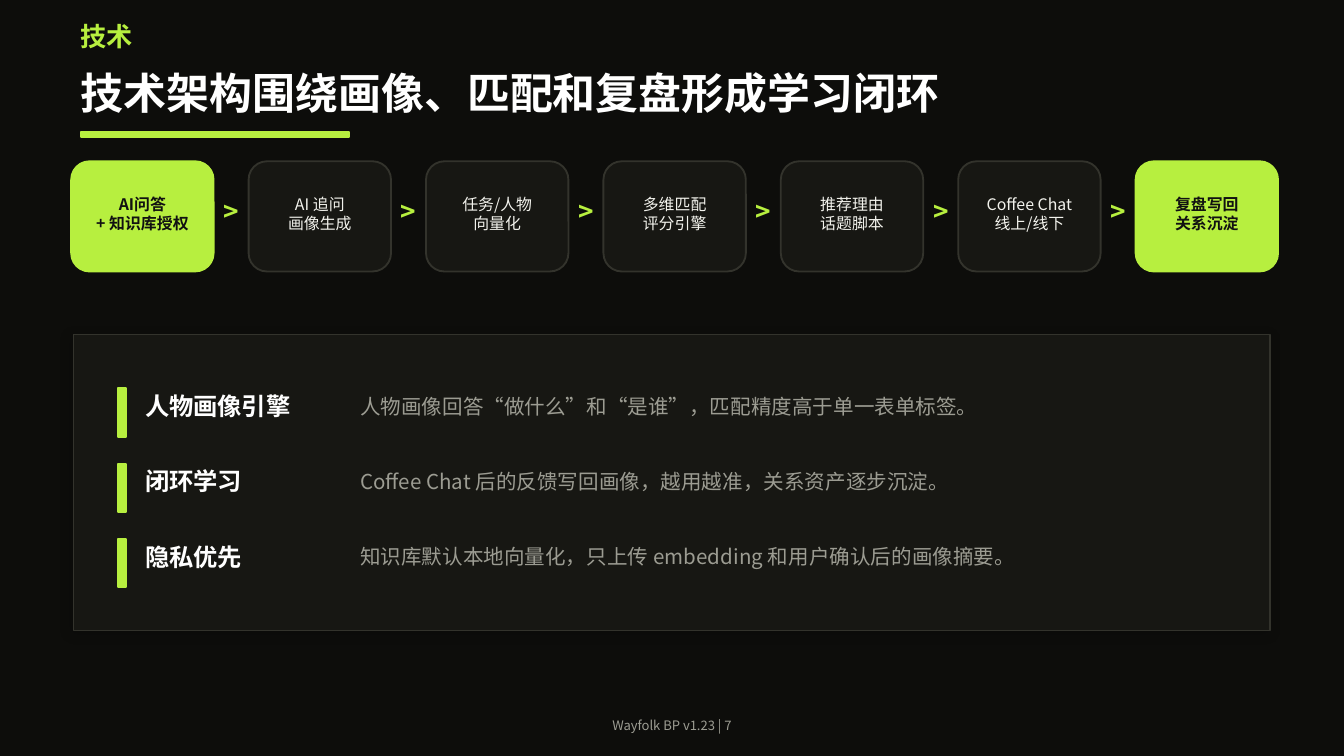
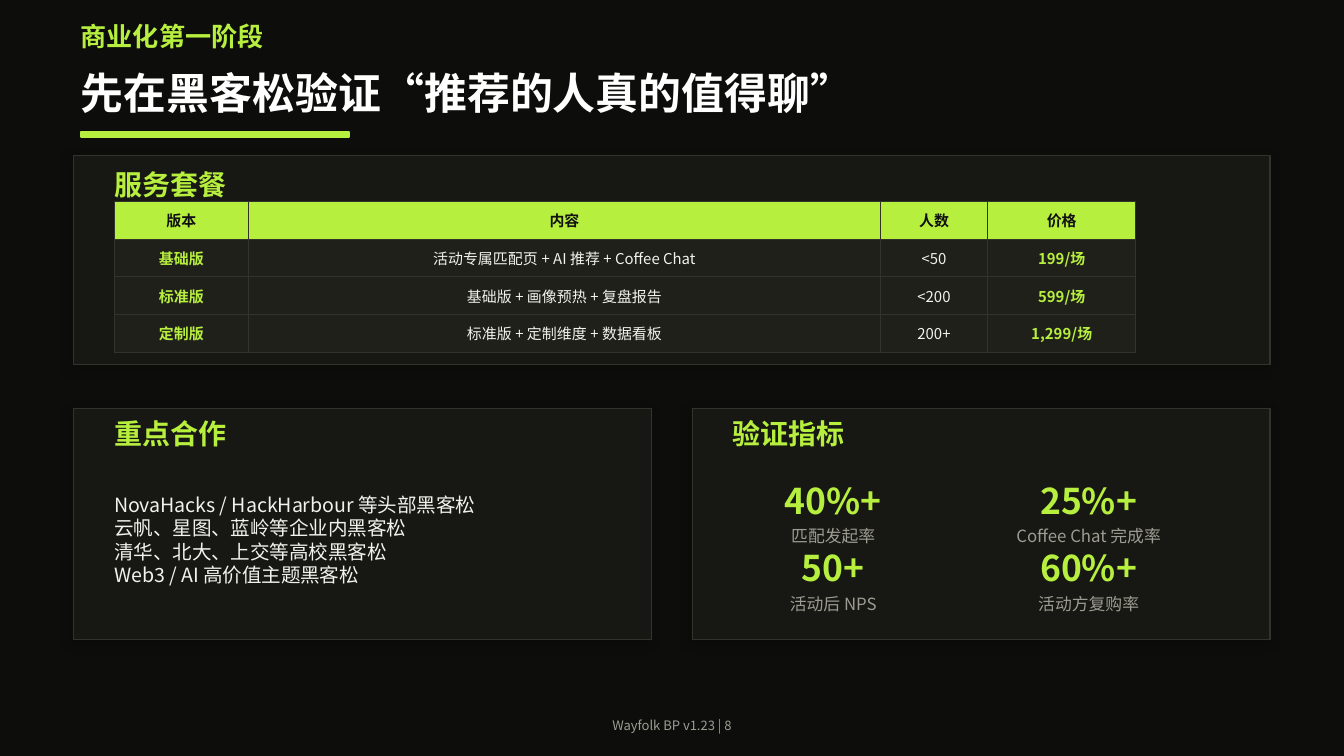
"""Build two dark slides on system architecture and first-stage commercialisation."""
from dataclasses import dataclass

from lxml import etree
from pptx import Presentation, util as u
from pptx.dml.color import RGBColor
from pptx.enum import shapes, text
from pptx.oxml.ns import qn
from pptx.shapes.autoshape import Shape
from pptx.slide import Slide
from pptx.text.text import TextFrame

FONT = "Noto Sans CJK SC"
COLORS = {
    "background": "0D0D0B",
    "accent": "B7EF3F",
    "panel": "171713",
    "cell": "20201A",
    "border": "33332C",
    "ink": "111111",
    "body": "F2F2EC",
    "muted": "9C9C92",
    "white": "FFFFFF",
}
LEFT, CENTER = text.PP_ALIGN.LEFT, text.PP_ALIGN.CENTER
RECTANGLE = shapes.MSO_SHAPE.RECTANGLE
ROUNDED = shapes.MSO_SHAPE.ROUNDED_RECTANGLE


@dataclass(frozen=True)
class Box:
    """A rectangle in inches."""
    left: float
    top: float
    width: float
    height: float

    def lengths(self) -> tuple[u.Length, ...]:
        """Return the sides as slide lengths."""
        return tuple(u.Inches(side) for side in (self.left, self.top, self.width, self.height))


@dataclass(frozen=True)
class Step:
    """One stage of the process row."""
    label: str
    highlighted: bool = False


@dataclass(frozen=True)
class Feature:
    """A named strength with its explanation."""
    name: str
    detail: str


@dataclass(frozen=True)
class Metric:
    """A target value with its caption."""
    value: str
    caption: str


@dataclass(frozen=True)
class Panel:
    """A bordered area with an optional heading."""
    box: Box
    heading: str = ""
    heading_gap: float = 0.06
    heading_width: float = 3


STEPS = (
    Step("AI问答\n+ 知识库授权", True),
    Step("AI 追问\n画像生成"),
    Step("任务/人物\n向量化"),
    Step("多维匹配\n评分引擎"),
    Step("推荐理由\n话题脚本"),
    Step("Coffee Chat\n线上/线下"),
    Step("复盘写回\n关系沉淀", True),
)
FEATURES = (
    Feature("人物画像引擎", "人物画像回答“做什么”和“是谁”，匹配精度高于单一表单标签。"),
    Feature("闭环学习", "Coffee Chat 后的反馈写回画像，越用越准，关系资产逐步沉淀。"),
    Feature("隐私优先", "知识库默认本地向量化，只上传 embedding 和用户确认后的画像摘要。"),
)
PACKAGES = (
    ("版本", "内容", "人数", "价格"),
    ("基础版", "活动专属匹配页 + AI 推荐 + Coffee Chat", "<50", "199/场"),
    ("标准版", "基础版 + 画像预热 + 复盘报告", "<200", "599/场"),
    ("定制版", "标准版 + 定制维度 + 数据看板", "200+", "1,299/场"),
)
COLUMN_WIDTHS = (1, 4.7, 0.8, 1.1)
ROW_HEIGHT = 0.28
PARTNERS = "\n".join((
    "NovaHacks / HackHarbour 等头部黑客松",
    "云帆、星图、蓝岭等企业内黑客松",
    "清华、北大、上交等高校黑客松",
    "Web3 / AI 高价值主题黑客松",
))
METRICS = (
    Metric("40%+", "匹配发起率"),
    Metric("25%+", "Coffee Chat 完成率"),
    Metric("50+", "活动后 NPS"),
    Metric("60%+", "活动方复购率"),
)


def rgb(name: str) -> RGBColor:
    """Look up a named colour."""
    return RGBColor.from_string(COLORS[name])


def write(frame: TextFrame, content: str, *, size: float, color: str,
          bold: bool = False, align: text.PP_ALIGN = LEFT) -> None:
    """Write one formatted paragraph for each line of content."""
    for index, line in enumerate(content.split("\n")):
        paragraph = frame.add_paragraph() if index else frame.paragraphs[0]
        paragraph.alignment = align
        run = paragraph.add_run()
        run.text = line
        run.font.name = FONT
        run.font.size = u.Pt(size)
        run.font.bold = bold
        run.font.color.rgb = rgb(color)
        etree.SubElement(run.font._element, qn("a:ea"), typeface=FONT)


def add_text(slide: Slide, box: Box, content: str, **style) -> None:
    """Place vertically centred text without margins."""
    frame = slide.shapes.add_textbox(*box.lengths()).text_frame
    frame.word_wrap = True
    frame.vertical_anchor = text.MSO_ANCHOR.MIDDLE
    frame.margin_left = frame.margin_top = frame.margin_right = frame.margin_bottom = 0
    write(frame, content, **style)


def add_block(slide: Slide, box: Box, fill: str = "accent", line: str = "accent",
              line_width: float = 1, kind: shapes.MSO_SHAPE = RECTANGLE) -> Shape:
    """Draw a filled and outlined shape without a shadow."""
    shape = slide.shapes.add_shape(kind, *box.lengths())
    shape.shadow.inherit = False
    shape.fill.solid()
    shape.fill.fore_color.rgb = rgb(fill)
    shape.line.color.rgb = rgb(line)
    shape.line.width = u.Pt(line_width)
    return shape


def add_panel(slide: Slide, panel: Panel) -> None:
    """Draw a panel with a soft shadow and its heading."""
    shape = add_block(slide, panel.box, "panel", "border", 0.6)
    effects = shape._element.spPr.find(qn("a:effectLst"))
    shadow = etree.SubElement(effects, qn("a:outerShdw"), blurRad=str(u.Pt(6)),
                              dist=str(u.Pt(2)), dir=str(135 * 60000), rotWithShape="0")
    shade = etree.SubElement(shadow, qn("a:srgbClr"), val="000000")
    etree.SubElement(shade, qn("a:alpha"), val="20000")
    if panel.heading:
        heading_box = Box(panel.box.left + 0.3, panel.box.top + panel.heading_gap,
                          panel.heading_width, 0.25)
        add_text(slide, heading_box, panel.heading, size=15, color="accent", bold=True)


def add_slide(presentation: Presentation, section: str, title: str, number: int) -> Slide:
    """Add a slide with the shared background, header and footer."""
    slide = presentation.slides.add_slide(presentation.slide_layouts[6])
    slide.background.fill.solid()
    slide.background.fill.fore_color.rgb = rgb("background")
    add_text(slide, Box(0.6, 0.14, 8.8, 0.26), section, size=14, color="accent", bold=True)
    add_text(slide, Box(0.6, 0.4, 8.8, 0.58), title, size=23, color="white", bold=True)
    add_block(slide, Box(0.6, 0.98, 2, 0.04))
    add_text(slide, Box(0.6, 5.32, 8.8, 0.16), f"Wayfolk BP v1.23 | {number}",
             size=7, color="muted", align=CENTER)
    return slide


def add_steps(slide: Slide) -> None:
    """Draw the process row with a chevron between stages."""
    for index, step in enumerate(STEPS):
        left = 0.53 + 1.32 * index
        if index:
            add_text(slide, Box(left - 0.24, 1.47, 0.22, 0.2), ">",
                     size=14, color="accent", bold=True, align=CENTER)
        fill, line, color = (("accent", "accent", "ink") if step.highlighted
                             else ("panel", "border", "body"))
        add_block(slide, Box(left, 1.2, 1.06, 0.82), fill, line, kind=ROUNDED)
        add_text(slide, Box(left + 0.05, 1.38, 0.96, 0.42), step.label,
                 size=8.5, color=color, bold=step.highlighted, align=CENTER)


def add_features(slide: Slide) -> None:
    """List the features beside accent bars."""
    add_panel(slide, Panel(Box(0.55, 2.49, 8.9, 2.2)))
    for index, feature in enumerate(FEATURES):
        top = 2.86 + 0.56 * index
        add_block(slide, Box(0.88, top + 0.03, 0.06, 0.36))
        add_text(slide, Box(1.08, top, 1.55, 0.32), feature.name,
                 size=13, color="white", bold=True)
        add_text(slide, Box(2.68, top, 6.25, 0.32), feature.detail, size=11, color="muted")


def add_packages(slide: Slide) -> None:
    """Draw the table of service packages."""
    box = Box(0.85, 1.5, sum(COLUMN_WIDTHS), ROW_HEIGHT * len(PACKAGES))
    table = slide.shapes.add_table(len(PACKAGES), len(COLUMN_WIDTHS), *box.lengths()).table
    table.horz_banding = False
    for column, width in zip(table.columns, COLUMN_WIDTHS):
        column.width = u.Inches(width)
    for row_index, values in enumerate(PACKAGES):
        table.rows[row_index].height = u.Inches(ROW_HEIGHT)
        for column_index, value in enumerate(values):
            cell = table.cell(row_index, column_index)
            header = row_index == 0
            key = column_index in (0, len(values) - 1)
            color = "ink" if header else "accent" if key else "body"
            cell.vertical_anchor = text.MSO_ANCHOR.MIDDLE
            cell.margin_left = cell.margin_right = u.Inches(0.02)
            cell.margin_top = cell.margin_bottom = u.Inches(0.02)
            write(cell.text_frame, value, size=8, color=color,
                  bold=header or key, align=CENTER)
            properties = cell._tc.get_or_add_tcPr()
            for side in ("lnL", "lnR", "lnT", "lnB"):
                border = etree.SubElement(properties, qn(f"a:{side}"), w=str(u.Pt(0.5)))
                border_fill = etree.SubElement(border, qn("a:solidFill"))
                etree.SubElement(border_fill, qn("a:srgbClr"), val=COLORS["border"])
            cell.fill.solid()
            cell.fill.fore_color.rgb = rgb("accent" if header else "cell")


def add_metrics(slide: Slide) -> None:
    """Lay out the metrics in two columns."""
    for index, metric in enumerate(METRICS):
        row, column = divmod(index, 2)
        left, top = 5.45 + 1.9 * column, 3.55 + 0.5 * row
        add_text(slide, Box(left, top, 1.5, 0.34), metric.value,
                 size=19, color="accent", bold=True, align=CENTER)
        add_text(slide, Box(left, top + 0.3, 1.5, 0.28), metric.caption,
                 size=9, color="muted", align=CENTER)


def build_architecture(presentation: Presentation) -> None:
    """Build the architecture slide."""
    slide = add_slide(presentation, "技术", "技术架构围绕画像、匹配和复盘形成学习闭环", 7)
    add_steps(slide)
    add_features(slide)


def build_commercialisation(presentation: Presentation) -> None:
    """Build the commercialisation slide."""
    slide = add_slide(presentation, "商业化第一阶段", "先在黑客松验证“推荐的人真的值得聊”", 8)
    for panel in (
        Panel(Box(0.55, 1.16, 8.9, 1.55), "服务套餐", 0.09, 2.5),
        Panel(Box(0.55, 3.04, 4.3, 1.72), "重点合作"),
        Panel(Box(5.15, 3.04, 4.3, 1.72), "验证指标"),
    ):
        add_panel(slide, panel)
    add_packages(slide)
    add_text(slide, Box(0.85, 3.59, 3.55, 0.85), PARTNERS, size=10.5, color="body")
    add_metrics(slide)


def main() -> None:
    """Build and save the presentation."""
    presentation = Presentation()
    presentation.slide_width = u.Inches(10)
    presentation.slide_height = u.Inches(10) * 9 // 16
    build_architecture(presentation)
    build_commercialisation(presentation)
    presentation.save("out.pptx")


if __name__ == "__main__":
    main()
